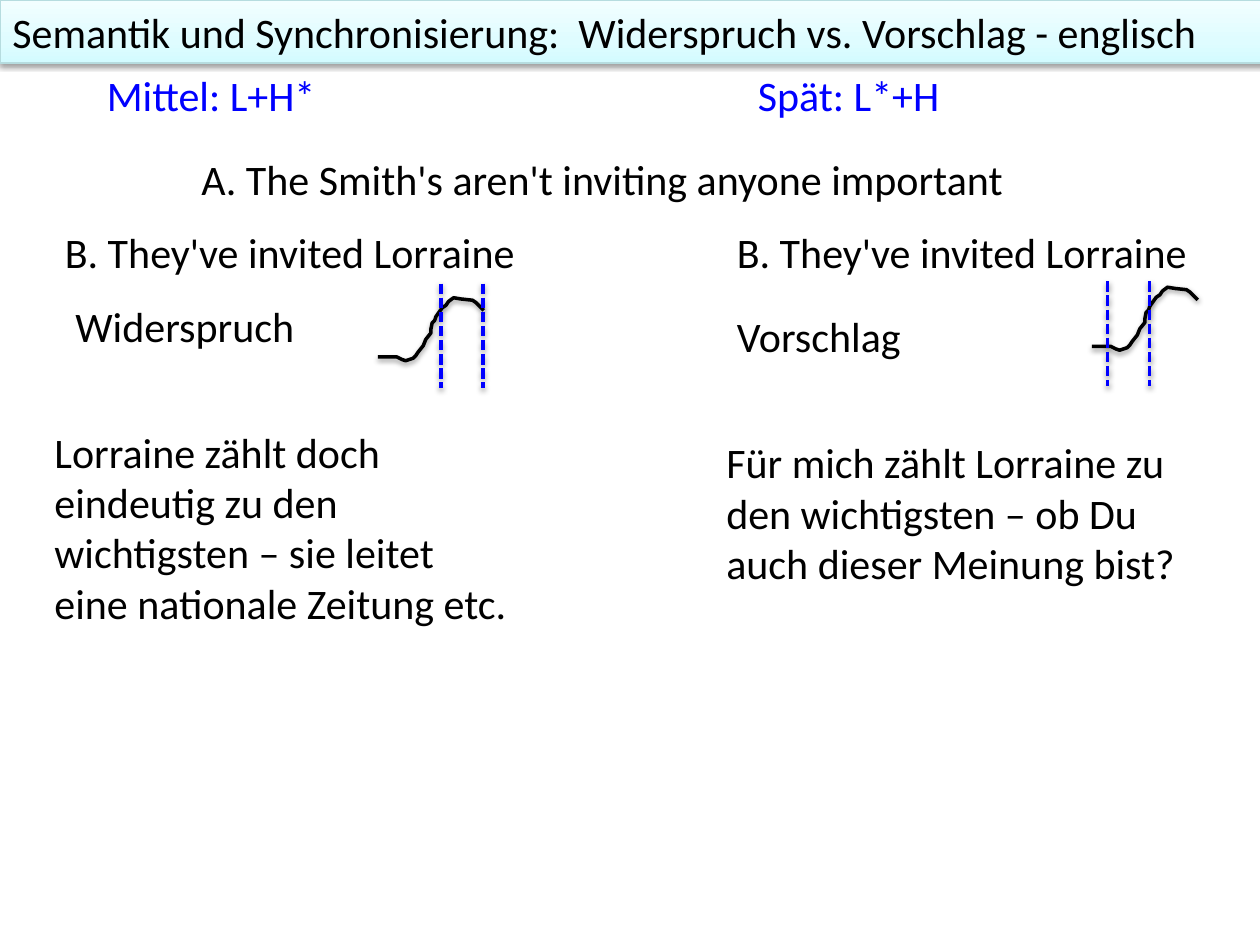
from copy import deepcopy
from dataclasses import dataclass

from lxml.etree import SubElement
from pptx import Presentation
from pptx.dml.color import RGBColor
from pptx.enum.dml import MSO_LINE as Dash
from pptx.enum.shapes import MSO_CONNECTOR as Conn, MSO_SHAPE as Form
from pptx.enum.text import MSO_ANCHOR as Anchor, MSO_AUTO_SIZE as Fit, PP_ALIGN as Align
from pptx.oxml.ns import qn
from pptx.util import Emu, Inches, Pt

WIDTH, HEIGHT = Inches(10), Inches(7.5)
CELL = WIDTH // 120  # 120 columns by 90 rows of square cells
BLACK, BLUE = "000000", "0000FF"

# Pitch contour, in hundredths of an inch from its corner
PITCH = [(0, 50), (15, 50), (19, 52), (22, 53), (28, 51), (30, 49), (32, 46),
         (36, 41), (38, 36), (42, 31), (42, 28), (43, 23), (45, 21), (46, 18),
         (51, 11), (54, 9), (56, 6), (60, 3), (66, 4), (75, 5), (78, 7),
         (82, 11), (84, 13)]


@dataclass
class Box:
    col: float
    row: float
    cols: float
    rows: float = 6


@dataclass
class Side:
    """One accent type: label, reply, meaning, gloss and contour."""
    accent: str
    head: Box
    reply: Box
    sense: str
    tag: Box
    gloss: str
    note: Box
    curve: tuple[float, float]
    marks: tuple[float, float]
    top: float


SIDES = [
    Side("Mittel: L+H*", Box(9, 6, 31), Box(5, 21, 48),
         "Widerspruch", Box(6, 28, 24),
         "Lorraine zählt doch eindeutig zu den wichtigsten – sie leitet "
         "eine nationale Zeitung etc.", Box(4, 40, 46, 20.6),
         (36, 28), (42, 46), 27),
    Side("Spät: L*+H", Box(71, 6, 31), Box(69, 21, 48),
         "Vorschlag", Box(69, 29, 24),
         "Für mich zählt Lorraine zu den wichtigsten – ob Du auch dieser "
         "Meinung bist?", Box(68, 41, 47, 15.7),
         (104, 27), (105.5, 109.5), 26.8),
]


def cells(num: float) -> Emu:
    return Emu(round(num * CELL))


def place(box: Box) -> list[Emu]:
    return [cells(num) for num in (box.col, box.row, box.cols, box.rows)]


def tint(code: str) -> RGBColor:
    return RGBColor.from_string(code)


def shade(shape) -> None:
    """Add a soft shadow below; call it once the line is set."""
    effect = SubElement(shape._element.spPr, qn("a:effectLst"))
    outer = SubElement(effect, qn("a:outerShdw"), blurRad="40000",
                       dist="20000", dir="5400000", rotWithShape="0")
    color = SubElement(outer, qn("a:srgbClr"), val=BLACK)
    SubElement(color, qn("a:alpha"), val="38000")


def stroke(shape, color: str, width: float = 2) -> None:
    shape.line.color.rgb = tint(color)
    shape.line.width = Pt(width)


def write(shape, text: str, color: str = BLACK, size: float = 24) -> None:
    frame = shape.text_frame
    frame.word_wrap = True
    frame.auto_size = Fit.SHAPE_TO_FIT_TEXT
    frame.vertical_anchor = Anchor.TOP
    para = frame.paragraphs[0]
    para.alignment = Align.LEFT
    run = para.add_run()
    run.text = text
    run.font.name = "Calibri"
    run.font.size = Pt(size)
    run.font.color.rgb = tint(color)


def label(slide, box: Box, text: str, **style) -> None:
    write(slide.shapes.add_textbox(*place(box)), text, **style)


def banner(slide, box: Box, text: str) -> None:
    bar = slide.shapes.add_shape(Form.RECTANGLE, *place(box))
    bar.fill.gradient()
    bar.fill.gradient_angle = 90
    stops = bar._element.spPr.find(".//" + qn("a:gsLst"))
    stops.insert(1, deepcopy(stops[0]))
    shades = [(0, "D3FBFF"), (0.35, "DFFCFF"), (1, "F2FEFF")]
    for stop, (pos, color) in zip(bar.fill.gradient_stops, shades):
        stop.position = pos
        stop.color.rgb = tint(color)
    stroke(bar, "B6DCDF", 0.75)
    shade(bar)
    write(bar, text)


def contour(slide, col: float, row: float) -> None:
    pen = slide.shapes.build_freeform(*PITCH[0], scale=Inches(0.01))
    pen.add_line_segments(PITCH[1:], close=False)
    curve = pen.convert_to_shape(cells(col), cells(row))
    curve.fill.background()
    stroke(curve, BLACK)
    shade(curve)


def mark(slide, col: float, row: float) -> None:
    line = slide.shapes.add_connector(Conn.STRAIGHT, cells(col), cells(row),
                                      cells(col), cells(row + 10))
    stroke(line, BLUE)
    line.line.dash_style = Dash.SQUARE_DOT
    shade(line)


def draw(slide, side: Side) -> None:
    label(slide, side.reply, "B. They've invited Lorraine")
    contour(slide, *side.curve)
    for col in side.marks:
        mark(slide, col, side.top)
    label(slide, side.note, side.gloss)
    label(slide, side.tag, side.sense)
    label(slide, side.head, side.accent, color=BLUE)


def main() -> None:
    deck = Presentation()
    deck.slide_width, deck.slide_height = WIDTH, HEIGHT
    slide = deck.slides.add_slide(deck.slide_layouts[6])
    label(slide, Box(18, 14, 82), "A. The Smith's aren't inviting anyone important")
    for side in SIDES:
        draw(slide, side)
    banner(slide, Box(0, 0, 121.4),
           "Semantik und Synchronisierung:  Widerspruch vs. Vorschlag - englisch")
    deck.save("out.pptx")


if __name__ == "__main__":
    main()
